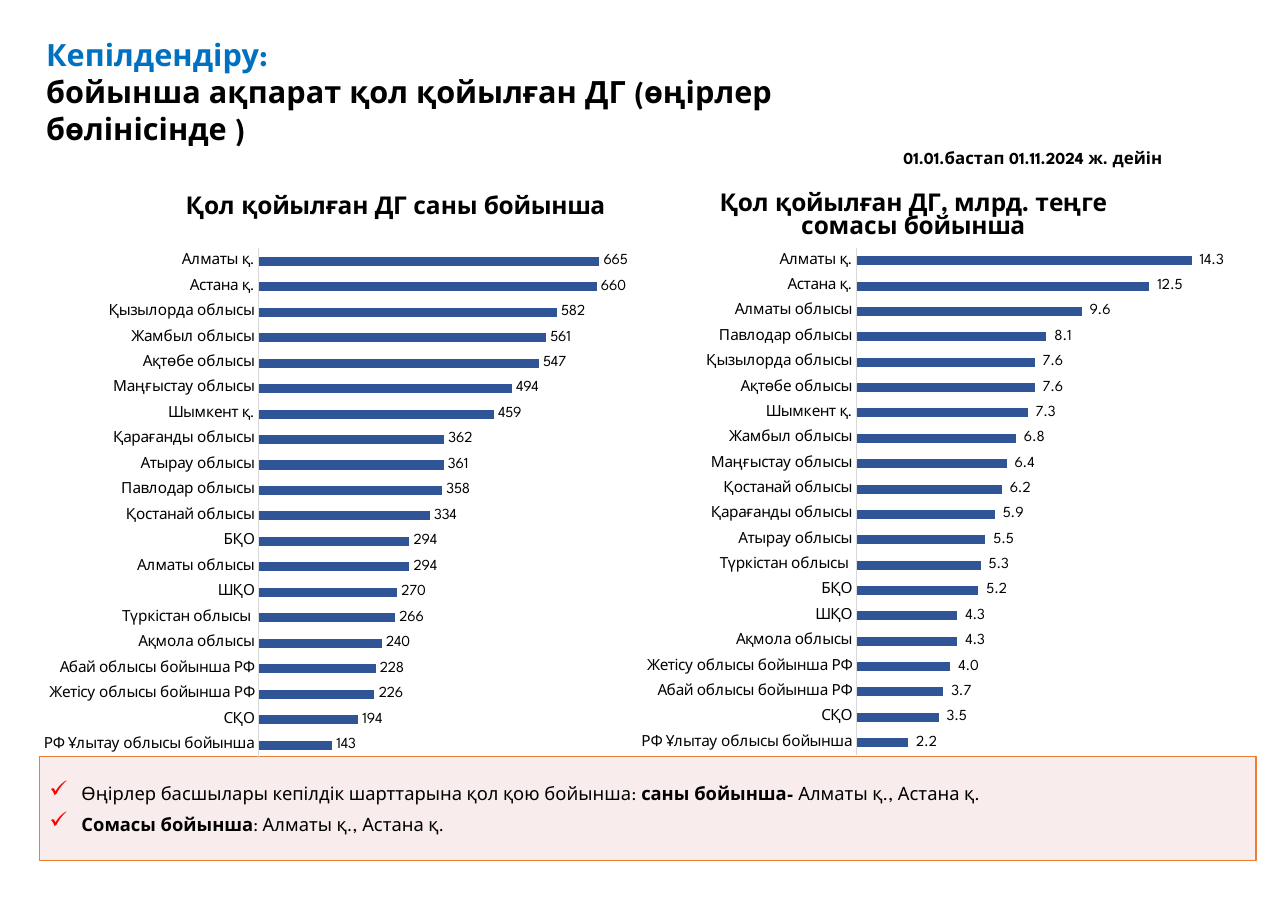
from lxml.etree import SubElement
from pptx import Presentation
from pptx.chart.data import CategoryChartData
from pptx.dml.color import RGBColor
from pptx.enum.chart import XL_CHART_TYPE, XL_LABEL_POSITION, XL_TICK_MARK
from pptx.enum.shapes import MSO_SHAPE
from pptx.enum.text import MSO_ANCHOR, MSO_AUTO_SIZE, PP_ALIGN
from pptx.oxml import parse_xml
from pptx.oxml.ns import nsdecls, qn
from pptx.util import Inches, Pt

BLACK = RGBColor(0, 0, 0)
BLUE = RGBColor(0x00, 0x70, 0xC0)
NAVY = RGBColor(0x2F, 0x55, 0x97)
GREY = RGBColor(0xD9, 0xD9, 0xD9)
PINK = RGBColor(0xF2, 0xDC, 0xDB)
ORANGE = RGBColor(0xED, 0x7D, 0x31)
RED = RGBColor(0xFF, 0, 0)

COUNTS = [
    ("РФ Ұлытау облысы бойынша", 143), ("СҚО", 194),
    ("Жетісу облысы бойынша РФ", 226), ("Абай облысы бойынша РФ", 228),
    ("Ақмола облысы", 240), ("Түркістан облысы ", 266), ("ШҚО", 270),
    ("Алматы облысы", 294), ("БҚО", 294), ("Қостанай облысы", 334),
    ("Павлодар облысы", 358), ("Атырау облысы", 361),
    ("Қарағанды облысы", 362), ("Шымкент қ.", 459),
    ("Маңғыстау облысы", 494), ("Ақтөбе облысы", 547),
    ("Жамбыл облысы", 561), ("Қызылорда облысы", 582),
    ("Астана қ.", 660), ("Алматы қ.", 665),
]
SUMS = [
    ("РФ Ұлытау облысы бойынша", 2.2), ("СҚО", 3.5),
    ("Абай облысы бойынша РФ", 3.7), ("Жетісу облысы бойынша РФ", 4),
    ("Ақмола облысы", 4.3), ("ШҚО", 4.3), ("БҚО", 5.2),
    ("Түркістан облысы ", 5.3), ("Атырау облысы", 5.5),
    ("Қарағанды облысы", 5.9), ("Қостанай облысы", 6.2),
    ("Маңғыстау облысы", 6.4), ("Жамбыл облысы", 6.8),
    ("Шымкент қ.", 7.3), ("Ақтөбе облысы", 7.6),
    ("Қызылорда облысы", 7.6), ("Павлодар облысы", 8.1),
    ("Алматы облысы", 9.6), ("Астана қ.", 12.5), ("Алматы қ.", 14.3),
]


class Deck:
    """Holds the style and the current slide, and adds each kind of element."""

    face = "League Spartan"

    def __init__(self, wide, high):
        self.file = Presentation()
        self.file.slide_width = Inches(wide)
        self.file.slide_height = Inches(high)
        self.slide = self.file.slides.add_slide(self.file.slide_layouts[6])

    def style(self, font, size, color=BLACK, bold=False):
        font.name = self.face
        font.size = Pt(size)
        font.bold = bold
        font.color.rgb = color

    def run(self, para, text, size, color=BLACK, bold=False):
        run = para.add_run()
        run.text = text
        self.style(run.font, size, color, bold)

    def text(self, box, runs, size, wrap=True):
        frame = self.slide.shapes.add_textbox(*map(Inches, box)).text_frame
        frame.word_wrap = wrap
        frame.auto_size = MSO_AUTO_SIZE.SHAPE_TO_FIT_TEXT
        para = frame.paragraphs[0]
        for i, (words, color) in enumerate(runs):
            if i:
                para.add_line_break()
            self.run(para, words, size, color, True)

    def mark(self, para):
        props = para._p.get_or_add_pPr()
        props.set("marL", str(Inches(0.3)))
        props.set("indent", str(-Inches(0.29)))
        tint = SubElement(props, qn("a:buClr"))
        SubElement(tint, qn("a:srgbClr"), val=str(RED))
        SubElement(props, qn("a:buSzPct"), val="125000")
        SubElement(props, qn("a:buChar"), char="✓")

    def panel(self, box, lines, size):
        shape = self.slide.shapes.add_shape(MSO_SHAPE.RECTANGLE, *map(Inches, box))
        shape.shadow.inherit = False
        shape.fill.solid()
        shape.fill.fore_color.rgb = PINK
        tint = shape._element.spPr.find(qn("a:solidFill"))[0]
        SubElement(tint, qn("a:alpha"), val="50000")
        shape.line.color.rgb = ORANGE
        shape.line.width = Pt(1)
        frame = shape.text_frame
        frame.word_wrap = True
        frame.vertical_anchor = MSO_ANCHOR.MIDDLE
        frame.margin_left = frame.margin_right = Inches(0.08)
        frame.margin_top = frame.margin_bottom = Inches(0.04)
        for i, runs in enumerate(lines):
            para = frame.add_paragraph() if i else frame.paragraphs[0]
            para.alignment = PP_ALIGN.LEFT
            para.space_after = Pt(6)
            self.mark(para)
            for words, bold in runs:
                self.run(para, words, size, bold=bold)

    def place(self, node, index, inner=False, **spots):
        old = node.find(qn("c:layout"))
        if old is not None:
            node.remove(old)
        target = '<c:layoutTarget val="inner"/>' if inner else ""
        modes = "".join(f'<c:{key}Mode val="edge"/>' for key in "xy")
        sizes = "".join(f'<c:{key} val="{val}"/>' for key, val in spots.items())
        node.insert(index, parse_xml(
            f'<c:layout {nsdecls("c")}><c:manualLayout>{target}{modes}{sizes}'
            "</c:manualLayout></c:layout>"))

    def chart(self, box, title, rows, top, form, spot, plot):
        data = CategoryChartData()
        data.categories = [name for name, _ in rows]
        data.add_series("Series 1", [val for _, val in rows])
        chart = self.slide.shapes.add_chart(
            XL_CHART_TYPE.BAR_CLUSTERED, *map(Inches, box), data).chart
        self.style(chart.font, 10)
        chart.has_legend = False
        chart.has_title = True
        head = chart.chart_title
        para = head.text_frame.paragraphs[0]
        para.alignment = PP_ALIGN.CENTER
        self.run(para, title, 16, bold=True)
        self.place(head._element, 1, **spot)
        self.place(chart._chartSpace.chart.plotArea, 0, True, **plot)

        names = chart.category_axis
        names.major_tick_mark = names.minor_tick_mark = XL_TICK_MARK.NONE
        names.format.line.color.rgb = GREY
        names.format.line.width = Pt(0.75)
        self.style(names.tick_labels.font, 10)
        scale = chart.value_axis
        scale.minimum_scale, scale.maximum_scale = 0, top
        scale.has_major_gridlines = False
        scale.visible = False

        bars = chart.plots[0]
        bars.gap_width = 182
        bars.vary_by_categories = False
        fill = bars.series[0].format.fill
        fill.solid()
        fill.fore_color.rgb = NAVY
        bars.has_data_labels = True
        tags = bars.data_labels
        tags.show_value = True
        tags.position = XL_LABEL_POSITION.OUTSIDE_END
        tags.number_format = form
        tags.number_format_is_linked = False
        self.style(tags.font, 10)


def main():
    deck = Deck(11.69, 8.27)
    deck.text((0.32, 0.28, 8.3, 0.77), [
        ("Кепілдендіру: ", BLUE),
        ("бойынша ақпарат қол қойылған ДГ (өңірлер бөлінісінде )", BLACK),
    ], 20)
    deck.text((8.1, 1.29, 2.71, 0.29),
              [("01.01.бастап 01.11.2024 ж. дейін", BLACK)], 11, False)
    deck.panel((0.36, 6.87, 11.04, 0.94), [
        [("Өңірлер басшылары кепілдік шарттарына қол қою бойынша: ", False),
         ("саны бойынша-", True), (" Алматы қ., Астана қ.", False)],
        [("Сомасы бойынша", True), (": Алматы қ., Астана қ.", False)],
    ], 12)
    deck.chart((0.29, 1.67, 5.42, 5.32), "Қол қойылған ДГ саны бойынша",
               COUNTS, 700, "General", dict(x=0.25, y=0.01),
               dict(x=0.38, y=0.11, w=0.6, h=0.87))
    deck.chart((5.71, 1.42, 5.58, 5.55),
               "Қол қойылған ДГ, млрд. теңге сомасы бойынша",
               SUMS, 16, r"#\ ##0.0", dict(x=0.14, y=0.05),
               dict(x=0.37, y=0.15, w=0.61, h=0.83))
    deck.file.save("out.pptx")


if __name__ == "__main__":
    main()
